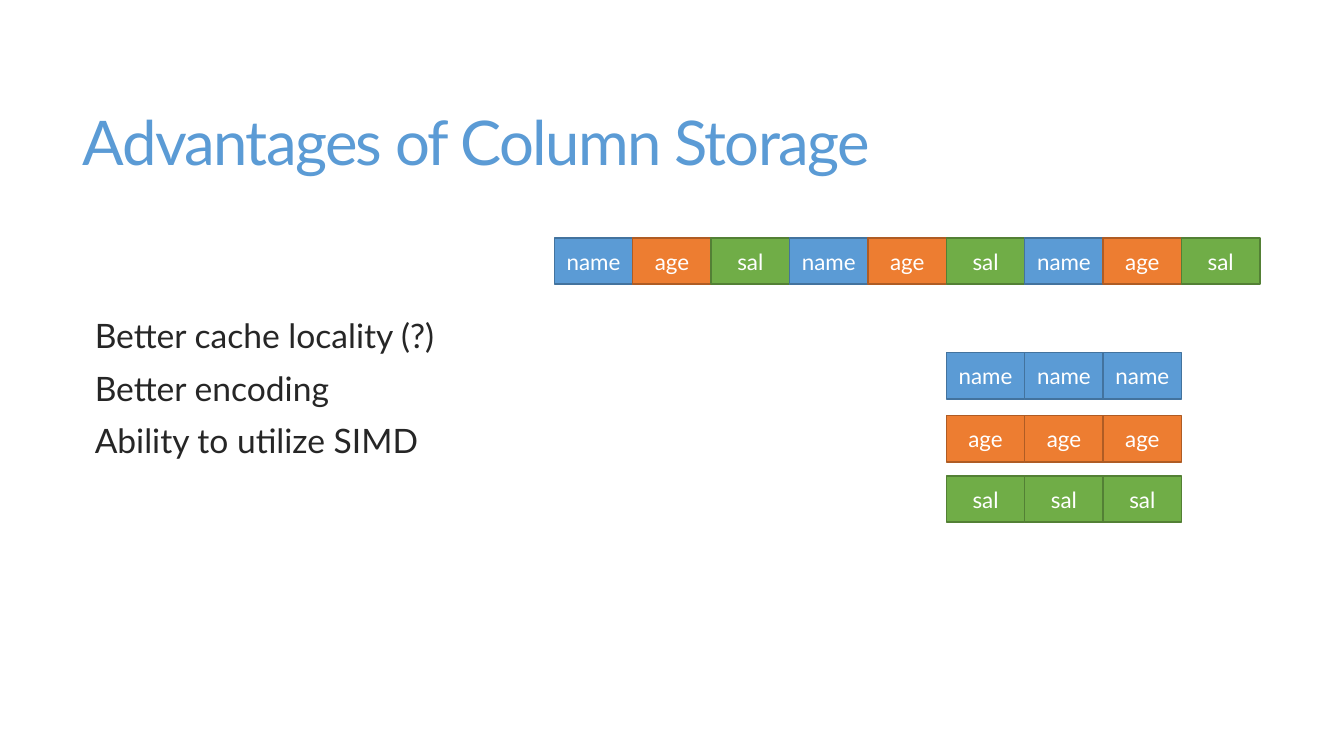
import pptx
import pptx.util
import pptx.dml.color
import pptx.enum.shapes
import pptx.enum.text
import lxml.etree

Pt = pptx.util.Pt
Align = pptx.enum.text.PP_ALIGN
Anchor = pptx.enum.text.MSO_ANCHOR

theme = {
    "font": "Lato",
    "title": ("5B9BD5", 44),
    "body": ("262626", 24),
    "cell": ("FFFFFF", 16),
    # field: fill, line
    "name": ("5B9BD5", "43739E"),
    "age": ("ED7D31", "AF5C24"),
    "sal": ("70AD47", "538035"),
}


def color(code):
    return pptx.dml.color.RGBColor.from_string(code)


def write(shape, lines, role, anchor, form):
    frame = shape.text_frame
    frame.text = "\n".join(lines)
    frame.word_wrap = True
    frame.auto_size = pptx.enum.text.MSO_AUTO_SIZE.NONE
    frame.vertical_anchor = anchor
    code, size = theme[role]
    for para in frame.paragraphs:
        for key, value in form.items():
            setattr(para, key, value)
        font = para.runs[0].font
        font.name, font.size = theme["font"], Pt(size)
        font.color.rgb = color(code)


deck = pptx.Presentation()
deck.slide_width, deck.slide_height = Pt(960), Pt(540)
slide = deck.slides.add_slide(deck.slide_layouts[1])
title, body = slide.placeholders

# Title and list
places = [(title, (52, 39.6, 848, 130.4)), (body, (53.3, 226, 846.7, 228.2))]
for holder, place in places:
    for side, value in zip(("left", "top", "width", "height"), place):
        setattr(holder, side, Pt(value))

write(title, ["Advantages of Column Storage"], "title", Anchor.MIDDLE,
      {"alignment": Align.LEFT, "line_spacing": 0.85})
title.text_frame.paragraphs[0].runs[0].font._element.set("spc", "-120")

points = ["Better cache locality (?)", "Better encoding",
          "Ability to utilize SIMD"]
write(body, points, "body", Anchor.TOP,
      {"alignment": Align.LEFT, "line_spacing": 0.85,
       "space_before": Pt(13)})

# Blank bullet with a narrow hanging indent
for para in body.text_frame.paragraphs:
    props = para._p.get_or_add_pPr()
    props.set("marL", str(Pt(7.2)))
    props.set("indent", str(-Pt(7.2)))
    tag = pptx.oxml.ns.qn("a:buChar")
    lxml.etree.SubElement(props, tag).set("char", " ")

# Row store on top, one strip per column below
wide, high = 56, 33
start = 396
inset = start + 5 * wide
fields = ["name", "age", "sal"]
strips = [(start, 170, fields * 3)]
for field, top in zip(fields, (252, 297, 340)):
    strips.append((inset, top, [field] * 3))

for left, top, cells in strips:
    for col, field in enumerate(cells):
        cell = slide.shapes.add_shape(
            pptx.enum.shapes.MSO_SHAPE.RECTANGLE,
            Pt(left + col * wide), Pt(top), Pt(wide), Pt(high))
        cell.shadow.inherit = False
        fill, line = theme[field]
        cell.fill.solid()
        cell.fill.fore_color.rgb = color(fill)
        cell.line.color.rgb = color(line)
        cell.line.width = Pt(1)
        write(cell, [field], "cell", Anchor.MIDDLE,
              {"alignment": Align.CENTER})

deck.save("out.pptx")
